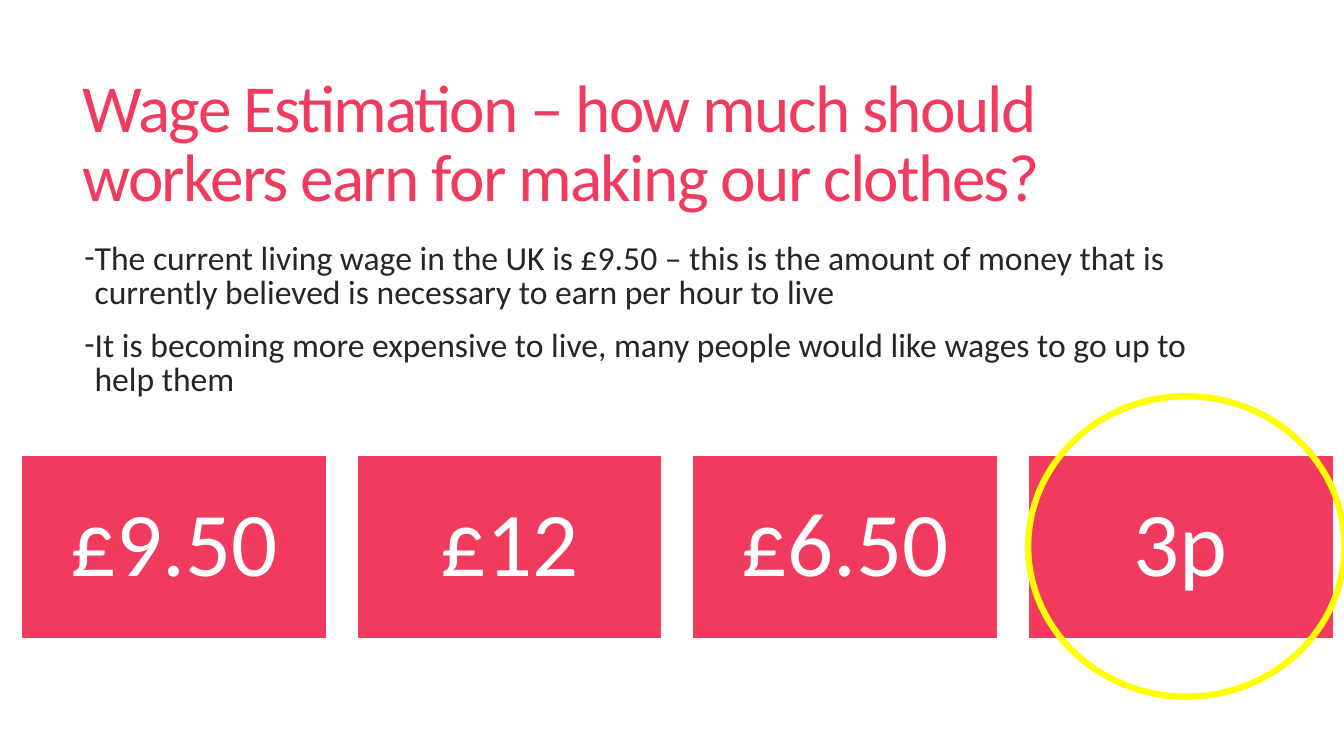
from dataclasses import dataclass

from lxml import etree
from pptx import Presentation
from pptx import util as u
from pptx.dml.color import RGBColor
from pptx.enum import shapes, text
from pptx.oxml import ns
from pptx.shapes.autoshape import Shape
from pptx.slide import Slide


@dataclass(frozen=True)
class Theme:
    font: str = "Calibri"
    pink: RGBColor = RGBColor(0xF0, 0x3B, 0x5E)
    ink: RGBColor = RGBColor(0x26, 0x26, 0x26)
    white: RGBColor = RGBColor(0xFF, 0xFF, 0xFF)
    yellow: RGBColor = RGBColor(0xFF, 0xFF, 0x00)
    heading_size: float = 48
    fact_size: float = 24
    wage_size: float = 65


@dataclass(frozen=True)
class Box:
    left: float
    top: float
    width: float
    height: float

    def lengths(self) -> tuple[u.Length, ...]:
        return tuple(u.Pt(n) for n in (self.left, self.top, self.width, self.height))


@dataclass(frozen=True)
class WageCard:
    wage: str
    box: Box


THEME = Theme()
HEADING = "Wage Estimation – how much should workers earn for making our clothes?"
FACTS = [
    "The current living wage in the UK is £9.50 – this is the amount of money "
    "that is currently believed is necessary to earn per hour to live",
    "It is becoming more expensive to live, many people would like wages to go up to help them",
]
WAGES = ["£9.50", "£12", "£6.50", "3p"]
CARD_LEFT, CARD_TOP, CARD_WIDTH, CARD_HEIGHT, CARD_STEP = 15.4, 324.9, 217.9, 131, 239.7
CARDS = [
    WageCard(wage, Box(CARD_LEFT + i * CARD_STEP, CARD_TOP, CARD_WIDTH, CARD_HEIGHT))
    for i, wage in enumerate(WAGES)
]


def write_text(
    holder: Shape,
    *paragraphs: str,
    size: float,
    color: RGBColor,
    align: text.PP_ALIGN = text.PP_ALIGN.LEFT,
    anchor: text.MSO_ANCHOR = text.MSO_ANCHOR.TOP,
    line_spacing: float = 0.85,
    gap: float = 0,
    tracking: float = 0,
    bullet: str = "",
    indent: float = 0,
) -> None:
    frame = holder.text_frame
    frame.word_wrap = True
    frame.vertical_anchor = anchor
    for i, words in enumerate(paragraphs):
        paragraph = frame.add_paragraph() if i else frame.paragraphs[0]
        paragraph.alignment = align
        paragraph.line_spacing = line_spacing
        if i:
            paragraph.space_before = u.Pt(gap)
        if bullet:
            properties = paragraph._p.get_or_add_pPr()
            properties.set("marL", str(u.Pt(indent)))
            properties.set("indent", str(-u.Pt(indent)))
            etree.SubElement(properties, ns.qn("a:buFont"), typeface=THEME.font)
            etree.SubElement(properties, ns.qn("a:buChar"), char=bullet)
        run = paragraph.add_run()
        run.text = words
        run.font.name = THEME.font
        run.font.size = u.Pt(size)
        run.font.color.rgb = color
        if tracking:
            run._r.get_or_add_rPr().set("spc", str(round(tracking * 100)))


def draw_card(slide: Slide, card: WageCard) -> None:
    tile = slide.shapes.add_shape(shapes.MSO_SHAPE.RECTANGLE, *card.box.lengths())
    tile.shadow.inherit = False
    tile.fill.solid()
    tile.fill.fore_color.rgb = THEME.pink
    tile.line.color.rgb = THEME.white
    tile.line.width = u.Pt(1)
    frame = tile.text_frame
    frame.margin_left = frame.margin_right = u.Pt(19.4)
    frame.margin_top = frame.margin_bottom = u.Pt(19.4)
    write_text(
        tile, card.wage, size=THEME.wage_size, color=THEME.white, line_spacing=0.9,
        align=text.PP_ALIGN.CENTER, anchor=text.MSO_ANCHOR.MIDDLE,
    )


def draw_answer_ring(slide: Slide, box: Box) -> None:
    ring = slide.shapes.add_shape(shapes.MSO_SHAPE.OVAL, *box.lengths())
    ring.shadow.inherit = False
    ring.fill.background()
    ring.line.color.rgb = THEME.yellow
    ring.line.width = u.Pt(4.5)


def main() -> None:
    deck = Presentation()
    deck.slide_width, deck.slide_height = u.Pt(960), u.Pt(540)
    slide = deck.slides.add_slide(deck.slide_layouts[6])

    heading = slide.shapes.add_textbox(*Box(51.8, 39.6, 848.2, 130.3).lengths())
    write_text(
        heading, HEADING, size=THEME.heading_size, color=THEME.pink,
        anchor=text.MSO_ANCHOR.MIDDLE, tracking=-1.2,
    )
    facts = slide.shapes.add_textbox(*Box(53.3, 169.9, 846.7, 296.6).lengths())
    write_text(
        facts, *FACTS, size=THEME.fact_size, color=THEME.ink,
        gap=13, bullet="-", indent=7.2,
    )
    for card in CARDS:
        draw_card(slide, card)
    draw_answer_ring(slide, Box(734.4, 283, 226, 214.6))

    deck.save("out.pptx")


if __name__ == "__main__":
    main()
